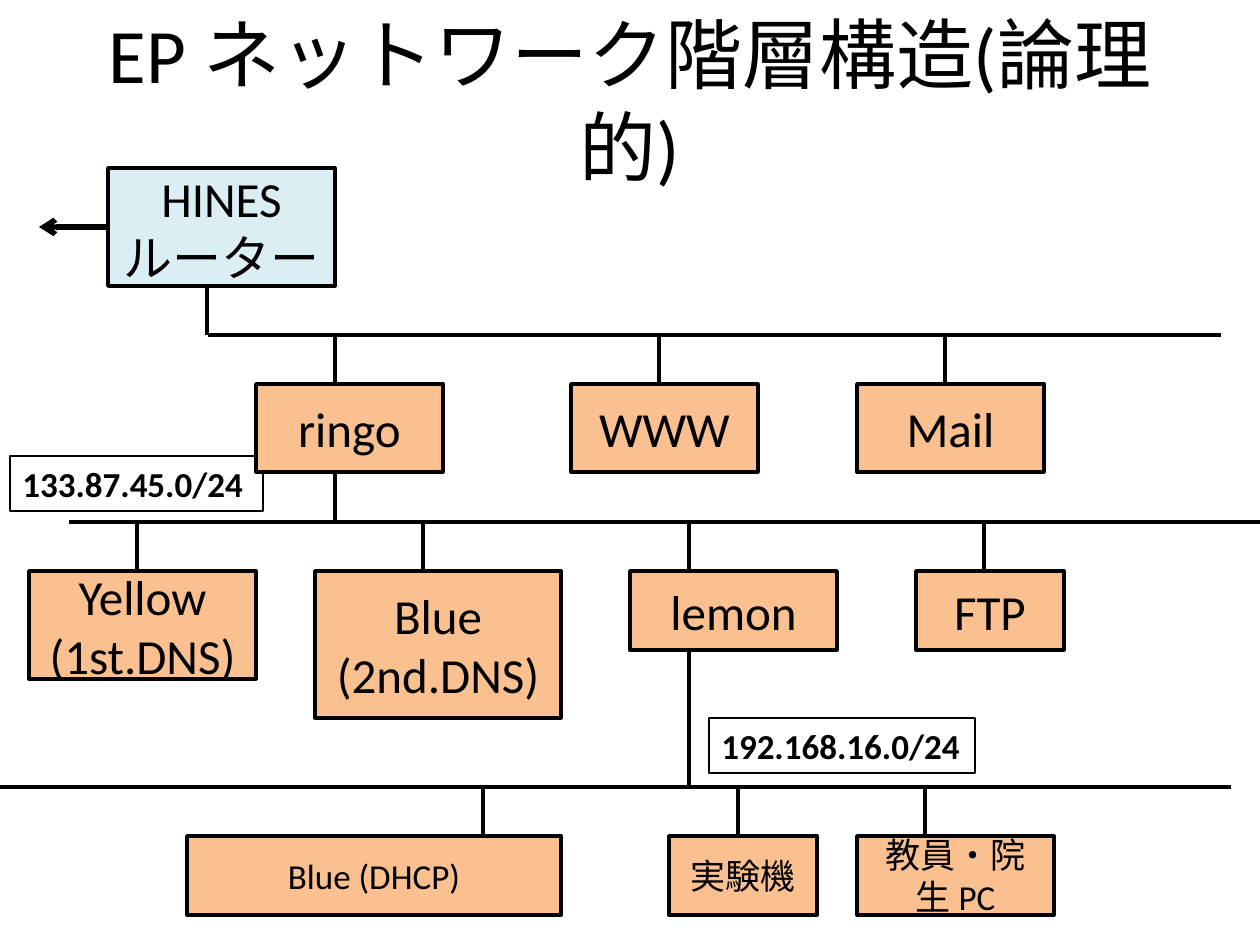
import pptx
import pptx.util
import pptx.dml.color
import pptx.enum.shapes
import pptx.enum.text
import pptx.oxml.ns
from lxml import etree

EMU_PER_PX = 914400 // 126
COLORS = {"ink": "000000", "server": "FAC090", "router": "DBEEF4"}
DROP = 49  # length of the line between a bus and its hosts


def px(length):
    return pptx.util.Emu(length * EMU_PER_PX)


def color(name):
    return pptx.dml.color.RGBColor.from_string(COLORS[name])


class NetworkSlide:
    def __init__(self, slide, font="Calibri", line_width=2):
        self.slide = slide
        self.font = font
        self.line_width = line_width

    def set_text(self, shape, text, size, bold=False, centered=True):
        frame = shape.text_frame
        frame.word_wrap = True
        align = pptx.enum.text.PP_ALIGN
        anchor = pptx.enum.text.MSO_ANCHOR
        frame.vertical_anchor = anchor.MIDDLE if centered else anchor.TOP
        frame.text = text
        font_format = {"name": self.font, "size": pptx.util.Pt(size), "bold": bold}
        for paragraph in frame.paragraphs:
            paragraph.alignment = align.CENTER if centered else align.LEFT
            for name, value in font_format.items():
                setattr(paragraph.runs[0].font, name, value)
            paragraph.runs[0].font.color.rgb = color("ink")

    def title(self, text, left, top, width, height):
        shape = self.slide.shapes.add_textbox(*map(px, (left, top, width, height)))
        self.set_text(shape, text, 44)

    def box(self, text, left, top, width, height, size=28, fill="server"):
        shape = self.rectangle(left, top, width, height, self.line_width)
        shape.fill.solid()
        shape.fill.fore_color.rgb = color(fill)
        self.set_text(shape, text, size)

    def label(self, text, left, top, width, height):
        shape = self.rectangle(left, top, width, height, 0.75)
        shape.fill.background()
        self.set_text(shape, text, 20, bold=True, centered=False)
        shape.text_frame.auto_size = pptx.enum.text.MSO_AUTO_SIZE.SHAPE_TO_FIT_TEXT

    def rectangle(self, left, top, width, height, line_width):
        shape = self.slide.shapes.add_shape(
            pptx.enum.shapes.MSO_SHAPE.RECTANGLE, *map(px, (left, top, width, height)))
        shape.shadow.inherit = False
        shape.line.color.rgb = color("ink")
        shape.line.width = pptx.util.Pt(line_width)
        return shape

    def line(self, x1, y1, x2, y2, width=None, arrow=False):
        connector = self.slide.shapes.add_connector(
            pptx.enum.shapes.MSO_CONNECTOR.STRAIGHT, *map(px, (x1, y1, x2, y2)))
        connector.line.color.rgb = color("ink")
        connector.line.width = pptx.util.Pt(width or self.line_width)
        qn = pptx.oxml.ns.qn
        properties = connector.element.spPr
        if arrow:
            etree.SubElement(properties.find(qn("a:ln")), qn("a:tailEnd"), type="arrow")
        etree.SubElement(properties, qn("a:effectLst"))

    def network(self, bus_y, bus_left, bus_right, hosts, size=28):
        """Draw a bus with its hosts: text, left, width, height, drop x."""
        self.line(bus_right, bus_y, bus_left, bus_y)
        for text, left, width, height, drop_x in hosts:
            self.line(drop_x, bus_y, drop_x, bus_y + DROP)
            self.box(text, left, bus_y + DROP, width, height, size)


def main():
    presentation = pptx.Presentation()
    presentation.slide_width = px(1260)
    presentation.slide_height = px(945)
    slide = presentation.slides.add_slide(presentation.slide_layouts[6])
    diagram = NetworkSlide(slide)

    diagram.title("EP ネットワーク階層構造(論理的)", 63, 20, 1134, 158)

    # Network labels
    diagram.label("133.87.45.0/24", 10, 456, 253, 55)
    diagram.label("192.168.16.0/24", 709, 718, 266, 55)

    # Router with its way out
    diagram.box("HINESルーター", 108, 168, 227, 118, fill="router")
    diagram.line(108, 227, 39, 227, width=3, arrow=True)

    # Links between the levels
    diagram.line(207, 286, 207, 335)
    diagram.line(335, 472, 335, 522)
    diagram.line(689, 650, 689, 787)

    # Networks from top to bottom
    diagram.network(335, 208, 1221, [
        ("ringo", 256, 187, 88, 335),
        ("WWW", 571, 187, 88, 659),
        ("Mail", 857, 187, 88, 945),
    ])
    diagram.network(522, 69, 1260, [
        ("Yellow\n(1st.DNS)", 29, 227, 108, 137),
        ("Blue\n(2nd.DNS)", 315, 246, 147, 423),
        ("lemon", 630, 207, 79, 689),
        ("FTP", 916, 148, 79, 984),
    ])
    diagram.network(787, 0, 1231, [
        ("Blue (DHCP)", 187, 374, 79, 483),
        ("実験機", 669, 148, 79, 738),
        ("教員・院生 PC", 857, 197, 79, 925),
    ], size=20)

    presentation.save("out.pptx")


if __name__ == "__main__":
    main()
